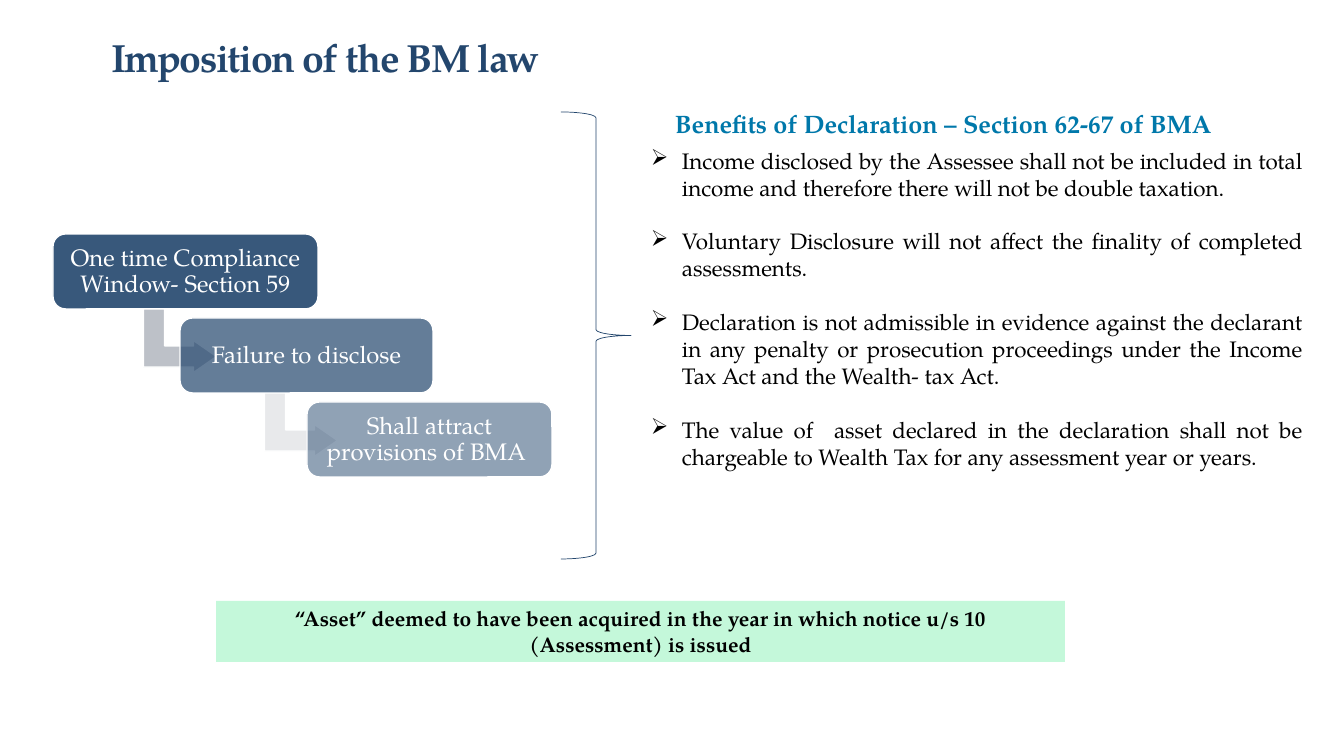
from lxml import etree
from pptx import Presentation
from pptx.dml.color import RGBColor
from pptx.enum.shapes import MSO_SHAPE
from pptx.enum.text import MSO_ANCHOR, MSO_AUTO_SIZE, PP_ALIGN
from pptx.oxml.ns import qn
from pptx.util import Pt

ROUNDED = MSO_SHAPE.ROUNDED_RECTANGLE
BENT_ARROW = MSO_SHAPE.BENT_UP_ARROW
BRACE = MSO_SHAPE.RIGHT_BRACE
RECTANGLE = MSO_SHAPE.RECTANGLE
MIDDLE = MSO_ANCHOR.MIDDLE
TOP = MSO_ANCHOR.TOP
LEFT = PP_ALIGN.LEFT
CENTER = PP_ALIGN.CENTER
JUSTIFY = PP_ALIGN.JUSTIFY
NO_AUTOFIT = MSO_AUTO_SIZE.NONE

PX = 914400 / 100.8
FONT = "TeX Gyre Pagella"
COLORS = {
    "navy": "23466D",
    "teal": "0078AA",
    "mint": "C4F8DA",
    "arrow_dark": "BDC1C8",
    "arrow_light": "E8E9EB",
    "white": "FFFFFF",
    "black": "000000",
}


def add_run(paragraph, text, size, color, bold=False):
    run = paragraph.add_run()
    run.text = text
    run.font.name = FONT
    run.font.size = Pt(size)
    run.font.bold = bold
    run.font.color.rgb = RGBColor.from_string(COLORS[color])
    return run


def add_box(kind, bounds, fill=None, line=None, width=1):
    shape = slide.shapes.add_shape(kind, *[round(value * PX) for value in bounds])
    shape.shadow.inherit = False
    if fill:
        shape.fill.solid()
        shape.fill.fore_color.rgb = RGBColor.from_string(COLORS[fill])
    else:
        shape.fill.background()
    if line:
        shape.line.color.rgb = RGBColor.from_string(COLORS[line])
        shape.line.width = Pt(width)
    else:
        shape.line.fill.background()
    return shape


presentation = Presentation()
presentation.slide_width = round(1344 * PX)
presentation.slide_height = round(756 * PX)
slide = presentation.slides.add_slide(presentation.slide_layouts[5])

title = slide.shapes.title
title.left, title.top, title.width, title.height = [
    round(value * PX) for value in (101, 17, 1159, 86)
]
title.text_frame.auto_size = NO_AUTOFIT
title.text_frame.vertical_anchor = MIDDLE
paragraph = title.text_frame.paragraphs[0]
paragraph.alignment = LEFT
paragraph.line_spacing = 0.9
run = add_run(paragraph, "Imposition of the BM law", 28, "navy", True)
run.font._element.set("spc", "-100")

steps = [
    ("One time Compliance Window- Section 59", 53, 265, 90, 148, "arrow_dark"),
    ("Failure to disclose", 180, 253, 70, 269, "arrow_light"),
    ("Shall attract provisions of BMA ", 307, 245, 50, None, None),
]
for index, (text, left, width, opacity, arrow_left, arrow_color) in enumerate(steps):
    top = 234 + index * 84
    if arrow_left:
        arrow = add_box(BENT_ARROW, (arrow_left, top + 70, 64, 73), arrow_color, "white")
        arrow.rotation = 90
        for position, value in enumerate((0.33, 0.25, 0.36)):
            arrow.adjustments[position] = value
    step = add_box(ROUNDED, (left, top, width, 75), "navy", "white")
    color = step.fill._xPr.find(qn("a:solidFill"))[0]
    etree.SubElement(color, qn("a:alpha")).set("val", str(opacity * 1000))
    frame = step.text_frame
    frame.word_wrap = True
    frame.vertical_anchor = MIDDLE
    frame.margin_left = frame.margin_right = round(9 * PX)
    frame.margin_top = frame.margin_bottom = round(7 * PX)
    paragraph = frame.paragraphs[0]
    paragraph.alignment = CENTER
    paragraph.line_spacing = 0.9
    add_run(paragraph, text, 17, "white")

add_box(BRACE, (561, 112, 70, 447), line="navy", width=0.5)

benefits = [
    "Income disclosed by the Assessee shall not be included in total income "
    "and therefore there will not be double taxation.",
    "Voluntary Disclosure will not affect the finality of completed assessments.",
    "Declaration is not admissible in evidence against the declarant in any penalty "
    "or prosecution proceedings under the Income Tax Act and the Wealth- tax Act.",
    "The value of  asset declared in the declaration shall not be chargeable "
    "to Wealth Tax for any assessment year or years.",
]
benefit_list = slide.shapes.add_textbox(*[round(value * PX) for value in (641, 142, 672, 417)])
frame = benefit_list.text_frame
frame.word_wrap = True
for index, benefit in enumerate(benefits):
    paragraph = frame.add_paragraph() if index else frame.paragraphs[0]
    properties = paragraph._p.get_or_add_pPr()
    properties.set("marL", str(round(31 * PX)))
    properties.set("indent", str(round(-31 * PX)))
    etree.SubElement(properties, qn("a:buChar")).set("char", "➢")
    paragraph.alignment = JUSTIFY
    if index:
        paragraph.space_before = Pt(19.25)
    add_run(paragraph, benefit, 16, "black")

heading = slide.shapes.add_textbox(*[round(value * PX) for value in (665, 103, 659, 40)])
heading.text_frame.word_wrap = True
add_run(
    heading.text_frame.paragraphs[0],
    "Benefits of Declaration – Section 62-67 of BMA", 18, "teal", True,
)

note = add_box(RECTANGLE, (216, 601, 849, 61), "mint")
note.text_frame.word_wrap = True
note.text_frame.vertical_anchor = TOP
paragraph = note.text_frame.paragraphs[0]
paragraph.alignment = CENTER
add_run(
    paragraph,
    "“Asset” deemed to have been acquired in the year in which notice u/s 10 "
    "(Assessment) is issued", 15, "black", True,
)

presentation.save("out.pptx")
